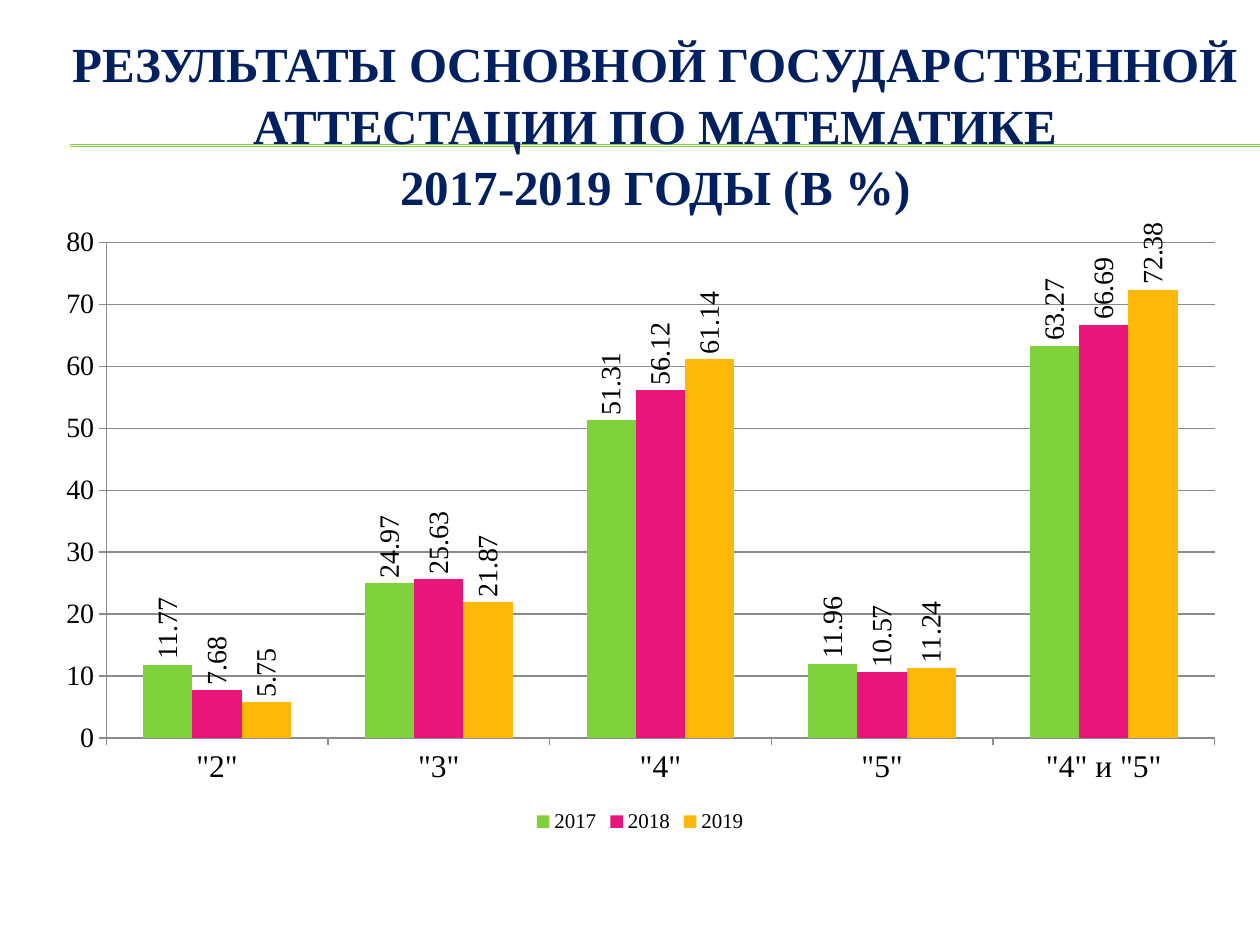
"""Builds the slide with the mathematics attestation results for 2017-2019."""
from pptx import Presentation
from pptx import util as u
from pptx.chart import data as chart_data
from pptx.dml.color import RGBColor
from pptx.enum import chart as ch, shapes, text
from pptx.oxml import parse_xml
from pptx.oxml.ns import nsdecls, qn
from lxml import etree

HEADING = "РЕЗУЛЬТАТЫ ОСНОВНОЙ ГОСУДАРСТВЕННОЙ АТТЕСТАЦИИ ПО МАТЕМАТИКЕ\v2017-2019 ГОДЫ (В %)"
MARKS = ['"2"', '"3"', '"4"', '"5"', '"4" и "5"']
RESULTS = {
    "2017": [11.77, 24.97, 51.31, 11.96, 63.27],
    "2018": [7.68, 25.63, 56.12, 10.57, 66.69],
    "2019": [5.75, 21.87, 61.14, 11.24, 72.38],
}
COLORS = {"2017": "7FD13B", "2018": "EA157A", "2019": "FEB80A",
          "heading": "002060", "text": "000000", "rule": "7FD13B", "axis": "8B8B8B"}
FONT = "Times New Roman"
RULE_HEIGHTS = [2.92, 2.95]
PLOT_AREA = {"x": 0.054, "y": 0.045, "w": 0.926, "h": 0.795}


def color(name):
    return RGBColor.from_string(COLORS[name])


def set_font(font, size, name="text", bold=False, face=FONT):
    font.size, font.name, font.bold = u.Pt(size), face, bold
    font.color.rgb = color(name)


def add_text(slide, words, left, top, width, height, size, name, bold=False, spacing=1.0):
    box = slide.shapes.add_textbox(u.Cm(left), u.Cm(top), u.Cm(width), u.Cm(height))
    frame = box.text_frame
    frame.word_wrap = True
    frame.vertical_anchor = text.MSO_ANCHOR.MIDDLE
    paragraph = frame.paragraphs[0]
    paragraph.text = words
    paragraph.alignment = text.PP_ALIGN.CENTER
    paragraph.line_spacing = spacing
    for run in paragraph.runs:
        set_font(run.font, size, name, bold)


def add_rule(slide, height):
    rule = slide.shapes.add_connector(
        shapes.MSO_CONNECTOR.STRAIGHT, u.Cm(1.42), u.Cm(height), u.Cm(25.4), u.Cm(height))
    rule.line.color.rgb = color("rule")
    rule.line.width = u.Pt(0.75)
    etree.SubElement(rule.element.spPr, qn("a:effectLst"))


def style_axis(axis, size):
    axis.major_tick_mark = ch.XL_TICK_MARK.OUTSIDE
    axis.minor_tick_mark = ch.XL_TICK_MARK.NONE
    set_font(axis.tick_labels.font, size)
    axis.format.line.color.rgb = color("axis")
    axis.format.line.width = u.Pt(0.75)


def add_results(slide):
    table = chart_data.CategoryChartData()
    table.categories = MARKS
    for year, shares in RESULTS.items():
        table.add_series(year, shares)
    results = slide.shapes.add_chart(
        ch.XL_CHART_TYPE.COLUMN_CLUSTERED,
        u.Cm(0.84), u.Cm(4.32), u.Cm(24.13), u.Cm(12.57), table).chart
    set_font(results.font, 10, face="Lato")
    results.has_title = False
    results.has_legend = True
    results.legend.position = ch.XL_LEGEND_POSITION.BOTTOM
    results.legend.include_in_layout = False
    set_font(results.legend.font, 12)

    style_axis(results.category_axis, 18)
    shares_axis = results.value_axis
    style_axis(shares_axis, 16)
    shares_axis.minimum_scale, shares_axis.maximum_scale = 0, 80
    shares_axis.major_unit = 10
    shares_axis.major_gridlines.format.line.color.rgb = color("axis")
    shares_axis.major_gridlines.format.line.width = u.Pt(0.75)

    columns = results.plots[0]
    columns.gap_width, columns.overlap = 150, 0
    columns.vary_by_categories = False
    for year in columns.series:
        year.format.fill.solid()
        year.format.fill.fore_color.rgb = color(year.name)
        labels = year.data_labels
        labels.show_value = True
        labels.position = ch.XL_LABEL_POSITION.OUTSIDE_END
        set_font(labels.font, 16)

    chart_xml = results._chartSpace
    for body in chart_xml.xpath("//c:dLbls/c:txPr/a:bodyPr"):
        body.set("rot", "-5400000")
        body.set("vert", "horz")
    plot_area = chart_xml.xpath("//c:plotArea")[0]
    for layout in plot_area.findall(qn("c:layout")):
        plot_area.remove(layout)
    modes = '<c:layoutTarget val="inner"/><c:xMode val="edge"/><c:yMode val="edge"/>'
    sides = "".join(f'<c:{side} val="{share}"/>' for side, share in PLOT_AREA.items())
    plot_area.insert(0, parse_xml(
        f'<c:layout {nsdecls("c")}><c:manualLayout>{modes}{sides}</c:manualLayout></c:layout>'))


def main():
    deck = Presentation()
    deck.slide_width, deck.slide_height = u.Cm(25.4), u.Cm(19.05)
    slide = deck.slides.add_slide(deck.slide_layouts[6])
    for height in RULE_HEIGHTS:
        add_rule(slide, height)
    add_text(slide, HEADING, 1.02, 0.79, 24.38, 3.38, size=28, name="heading",
             bold=True, spacing=1.05)
    add_results(slide)
    deck.save("out.pptx")


if __name__ == "__main__":
    main()
